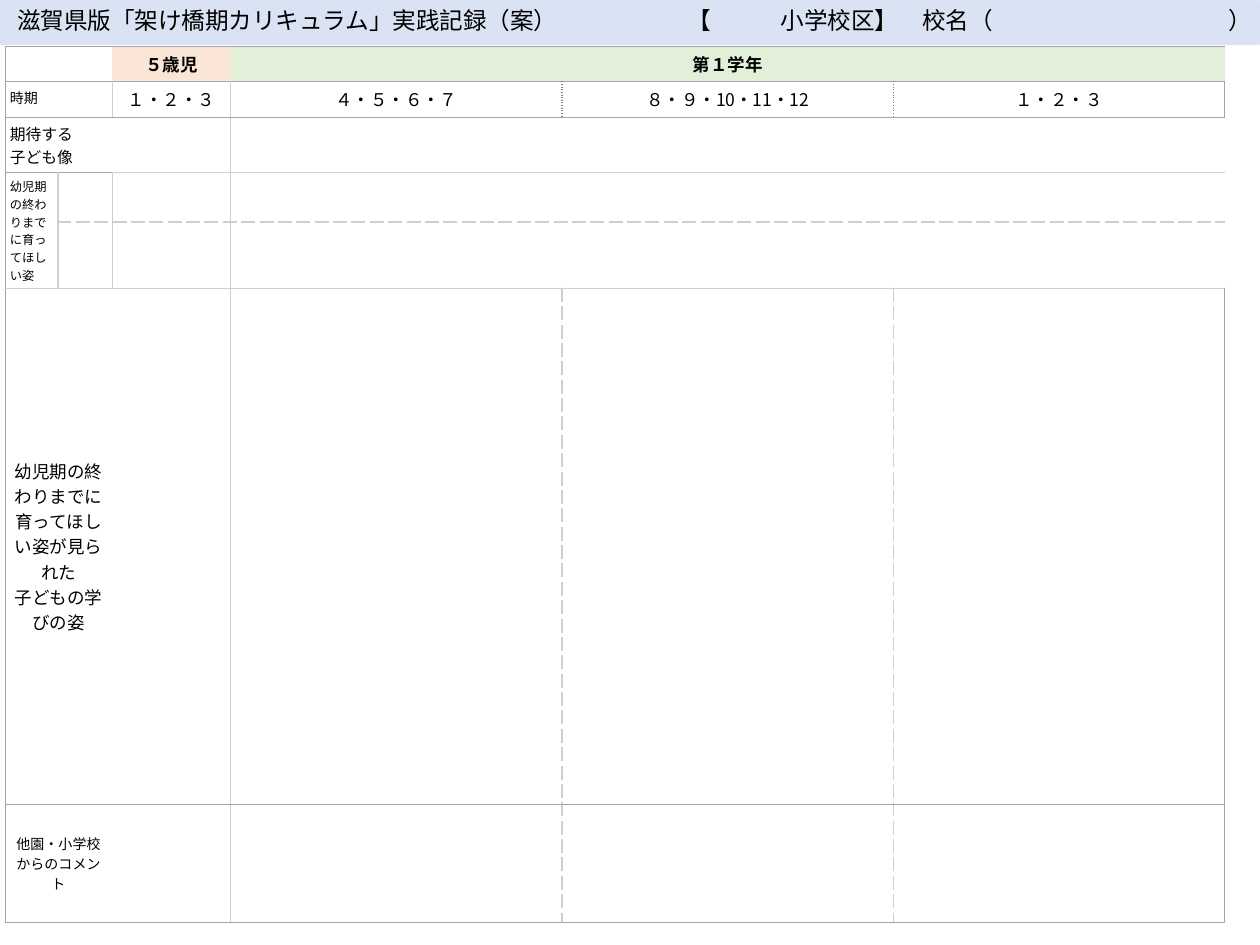
from lxml import etree
from pptx import Presentation
from pptx.dml.color import RGBColor
from pptx.enum.shapes import MSO_SHAPE
from pptx.enum.text import MSO_ANCHOR, PP_ALIGN
from pptx.oxml.ns import qn
from pptx.util import Cm, Pt

CENTER, LEFT = PP_ALIGN.CENTER, PP_ALIGN.LEFT
TOP, MIDDLE = MSO_ANCHOR.TOP, MSO_ANCHOR.MIDDLE
ROUNDED = MSO_SHAPE.ROUNDED_RECTANGLE
FONT = "Noto Sans CJK JP"
BLACK, BLUE, PEACH, GREEN = "000000", "DAE3F3", "FBE5D6", "E2F0D9"

COLUMNS = [1.07, 0.38, 0.71, 2.39, 6.68, 6.68, 6.68]
ROWS = [0.64, 0.64, 0.91, 0.99, 0.94, 10.39, 2.39]
INSET = Cm(0.1)

# Border codes: colour, width in points, dash
BORDERS = {
    "a": ("A5A5A5", 0.5, "solid"),
    "s": ("D0CECE", 0.75, "solid"),
    "d": ("D0CECE", 1, "solid"),
    "h": ("D0CECE", 1, "sysDash"),
    "t": ("808080", 1, "sysDot"),
}

# Row, column, row span, column span, borders (left, top, right, bottom), content
CELLS = [
    (0, 0, 1, 2, "aa-a", {}),
    (0, 2, 1, 1, "-a-a", {}),
    (0, 3, 1, 1, "-a-a", dict(text="５歳児", bold=True, align=CENTER, fill=PEACH)),
    (0, 4, 1, 3, "-aaa", dict(text="第１学年", bold=True, align=CENTER, fill=GREEN)),
    (1, 0, 1, 2, "aa-a", dict(text="時期", size=8)),
    (1, 2, 1, 1, "-asa", {}),
    (1, 3, 1, 1, "sada", dict(text="１・２・３", align=CENTER)),
    (1, 4, 1, 1, "data", dict(text="４・５・６・７", align=CENTER)),
    (1, 5, 1, 1, "tata", dict(text="８・９・10・11・12", align=CENTER)),
    (1, 6, 1, 1, "taaa", dict(text="１・２・３", align=CENTER)),
    (2, 0, 1, 3, "aasa", dict(text="期待する\n子ども像", size=9)),
    (2, 3, 1, 1, "sadd", {}),
    (2, 4, 1, 3, "daad", {}),
    (3, 0, 2, 1, "aasd", dict(text="幼児期の終わりまでに育ってほしい姿", size=7, vertical=True)),
    (3, 1, 1, 2, "sash", {}),
    (3, 3, 1, 1, "sddh", {}),
    (3, 4, 1, 3, "ddah", {}),
    (4, 1, 1, 2, "shsd", {}),
    (4, 3, 1, 1, "shdd", {}),
    (4, 4, 1, 3, "dhad", {}),
    (5, 0, 1, 3, "adsa", dict(text="幼児期の終わりまでに育ってほしい姿が見られた\n子どもの学びの姿",
                              align=CENTER, anchor=MIDDLE, vertical=True)),
    (5, 3, 1, 1, "sdda", {}),
    (5, 4, 1, 1, "ddha", {}),
    (5, 5, 1, 1, "hdha", {}),
    (5, 6, 1, 1, "hdaa", {}),
    (6, 0, 1, 3, "aasa", dict(text="他園・小学校からのコメント", size=8,
                              align=CENTER, anchor=MIDDLE, vertical=True)),
    (6, 3, 1, 1, "sada", {}),
    (6, 4, 1, 1, "daha", {}),
    (6, 5, 1, 1, "haha", {}),
    (6, 6, 1, 1, "haaa", {}),
]


def color(hex_string):
    return RGBColor.from_string(hex_string)


def write_text(frame, text, size, bold=False, align=LEFT):
    frame.text = text
    for paragraph in frame.paragraphs:
        paragraph.alignment = align
        font = paragraph.font
        font.name, font.size, font.bold = FONT, Pt(size), bold
        font.color.rgb = color(BLACK)
        properties = paragraph._p.get_or_add_pPr().find(qn("a:defRPr"))
        etree.SubElement(properties, qn("a:ea"), typeface=FONT)


def set_borders(cell, codes):
    """Draw the edges in the order left, top, right, bottom; '-' means no line."""
    properties = cell._tc.get_or_add_tcPr()
    edges = dict(zip("LTRB", codes))
    for position, side in enumerate("LRTB"):
        line = etree.Element(qn(f"a:ln{side}"))
        properties.insert(position, line)
        if edges[side] == "-":
            etree.SubElement(line, qn("a:noFill"))
            continue
        hex_string, width, dash = BORDERS[edges[side]]
        line.set("w", str(Pt(width)))
        fill = etree.SubElement(line, qn("a:solidFill"))
        etree.SubElement(fill, qn("a:srgbClr"), val=hex_string)
        etree.SubElement(line, qn("a:prstDash"), val=dash)


def fill_cell(cell, text="", size=10, bold=False, align=LEFT, anchor=TOP,
              fill=None, vertical=False):
    cell.margin_left = cell.margin_right = INSET
    cell.margin_top = cell.margin_bottom = INSET
    cell.vertical_anchor = anchor
    if fill:
        cell.fill.solid()
        cell.fill.fore_color.rgb = color(fill)
    else:
        cell.fill.background()
    if vertical:
        cell._tc.get_or_add_tcPr().set("vert", "eaVert")
    write_text(cell.text_frame, text, size, bold, align)


def add_record_table(slide, left, top):
    table = slide.shapes.add_table(len(ROWS), len(COLUMNS), left, top,
                                   Cm(sum(COLUMNS)), Cm(sum(ROWS))).table
    table.first_row = table.horz_banding = False
    for column, width in zip(table.columns, COLUMNS):
        column.width = Cm(width)
    for row, height in zip(table.rows, ROWS):
        row.height = Cm(height)
    for row, column, row_span, column_span, borders, content in CELLS:
        last_row, last_column = row + row_span - 1, column + column_span - 1
        origin = table.cell(row, column)
        if row_span * column_span > 1:
            origin.merge(table.cell(last_row, last_column))
        for i in range(row, last_row + 1):
            for j in range(column, last_column + 1):
                outer = (j == column, i == row, j == last_column, i == last_row)
                cell = table.cell(i, j)
                fill_cell(cell, **(content if cell.is_merge_origin or cell is origin
                                   or (i, j) == (row, column) else {}))
                set_borders(cell, [code if edge else "-"
                                   for code, edge in zip(borders, outer)])


def add_title_text(group, left, top, width, text, tab_stops=()):
    box = group.shapes.add_textbox(left, top, width, Cm(0.84))
    frame = box.text_frame
    frame.word_wrap = True
    write_text(frame, text, 13.5)
    if tab_stops:
        properties = frame.paragraphs[0]._p.get_or_add_pPr()
        tabs = etree.Element(qn("a:tabLst"))
        properties.find(qn("a:defRPr")).addprevious(tabs)
        for stop in tab_stops:
            etree.SubElement(tabs, qn("a:tab"), pos=str(Cm(stop)), algn="l")


def add_title_band(slide, left, top, width, height):
    group = slide.shapes.add_group_shape()
    band = group.shapes.add_shape(ROUNDED, left, top, width, height)
    band.adjustments[0] = 0.03
    band.shadow.inherit = False
    band.fill.solid()
    band.fill.fore_color.rgb = color(BLUE)
    band.line.fill.background()
    add_title_text(group, left + Cm(0.1), top, Cm(13.41),
                   "滋賀県版「架け橋期カリキュラム」実践記録（案）")
    add_title_text(group, left + Cm(13.61), top, Cm(12.09),
                   "【\t小学校区】\t校名（\t）", tab_stops=(1.88, 4.73, 10.9))


def main():
    presentation = Presentation()
    presentation.slide_width, presentation.slide_height = Cm(25.4), Cm(19.05)
    slide = presentation.slides.add_slide(presentation.slide_layouts[6])
    add_record_table(slide, Cm(0.1), Cm(0.94))
    add_title_band(slide, 0, 0, presentation.slide_width, Cm(0.91))
    presentation.save("out.pptx")


if __name__ == "__main__":
    main()
